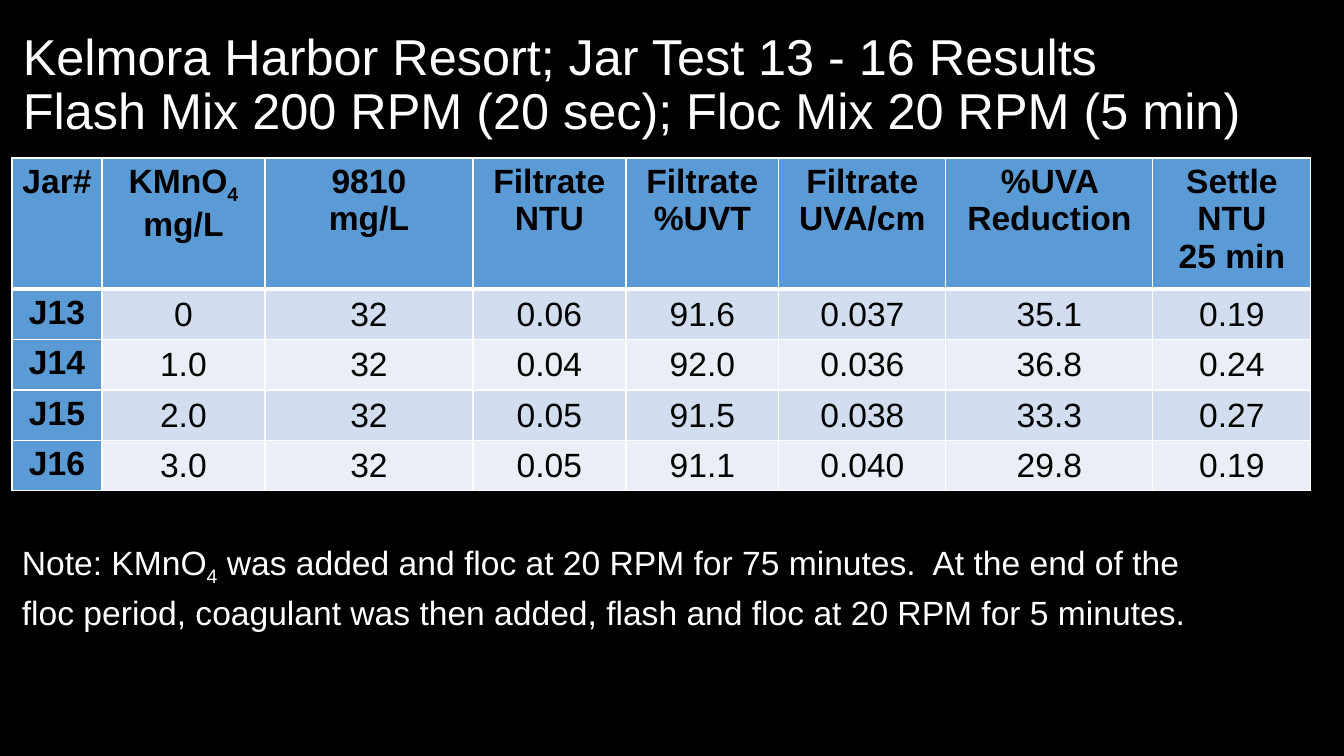
from lxml import etree
from pptx import Presentation
from pptx.dml.color import RGBColor
from pptx.enum.text import MSO_ANCHOR, PP_ALIGN
from pptx.oxml.ns import qn
from pptx.util import Pt

EMU_PER_PX = 12192000 / 1344
CENTER = PP_ALIGN.CENTER
TOP, MIDDLE = MSO_ANCHOR.TOP, MSO_ANCHOR.MIDDLE
FONT = "Arial"
COLORS = {
    "background": "000000",
    "light_text": "FFFFFF",
    "dark_text": "000000",
    "border": "FFFFFF",
    "header": "5B9BD5",
    "odd_row": "D2DEEF",
    "even_row": "EAEFF7",
}

TITLE = ["Kelmora Harbor Resort; Jar Test 13 - 16 Results\v"
         "Flash Mix 200 RPM (20 sec); Floc Mix 20 RPM (5 min)"]
NOTE = ["Note: KMnO_4_ was added and floc at 20 RPM for 75 minutes.  At the end of the",
        "floc period, coagulant was then added, flash and floc at 20 RPM for 5 minutes."]
COLUMN_WIDTHS = [90, 163, 208, 153, 153, 167, 207, 158]
HEADER_HEIGHT, ROW_HEIGHT = 123, 47
HEADERS = [
    ["Jar#"], ["KMnO_4_", "mg/L"], ["9810", "mg/L"], ["Filtrate", "NTU"],
    ["Filtrate", "%UVT"], ["Filtrate", "UVA/cm"], ["%UVA Reduction"],
    ["Settle", "NTU", "25 min"],
]
RESULTS = [
    ["J13", "0", "32", "0.06", "91.6", "0.037", "35.1", "0.19"],
    ["J14", "1.0", "32", "0.04", "92.0", "0.036", "36.8", "0.24"],
    ["J15", "2.0", "32", "0.05", "91.5", "0.038", "33.3", "0.27"],
    ["J16", "3.0", "32", "0.05", "91.1", "0.040", "29.8", "0.19"],
]


def px(length):
    return round(length * EMU_PER_PX)


def color(name):
    return RGBColor.from_string(COLORS[name])


def write_lines(text_frame, lines, size, color_name, bold=False, align=None):
    """Write one paragraph per line; text between underscores is subscript."""
    for index, line in enumerate(lines):
        paragraph = text_frame.add_paragraph() if index else text_frame.paragraphs[0]
        paragraph.alignment = align
        font = paragraph.font
        font.name, font.size, font.bold = FONT, Pt(size), bold
        font.color.rgb = color(color_name)
        if "_" not in line:
            paragraph.text = line
            continue
        for position, part in enumerate(filter(None, line.split("_"))):
            run = paragraph.add_run()
            run.text = part
            if position % 2:
                run.font._element.set("baseline", "-25000")


def add_text(slide, box, lines, size, wrap, anchor):
    shape = slide.shapes.add_textbox(*map(px, box))
    text_frame = shape.text_frame
    text_frame.word_wrap = wrap
    text_frame.vertical_anchor = anchor
    write_lines(text_frame, lines, size, "light_text")
    return text_frame


def set_borders(cell, bottom_width, top_width):
    properties = cell._tc.get_or_add_tcPr()
    widths = {"a:lnL": 1, "a:lnR": 1, "a:lnT": top_width, "a:lnB": bottom_width}
    for tag, width in widths.items():
        line = etree.SubElement(properties, qn(tag), w=str(Pt(width)))
        fill = etree.SubElement(line, qn("a:solidFill"))
        etree.SubElement(fill, qn("a:srgbClr"), val=COLORS["border"])


def fill_cell(cell, lines, row, column):
    is_header = row == 0
    is_label = is_header or column == 0
    set_borders(cell, 3 if is_header else 1, 3 if row == 1 else 1)
    cell.fill.solid()
    band = "odd_row" if row % 2 else "even_row"
    cell.fill.fore_color.rgb = color("header" if is_label else band)
    if not is_label:
        cell.vertical_anchor = MIDDLE
        cell.margin_left = cell.margin_right = cell.margin_top = px(1)
        cell.margin_bottom = 0
    write_lines(cell.text_frame, lines, 24, "dark_text", is_label, CENTER)


def add_results_table(slide, left, top):
    height = HEADER_HEIGHT + ROW_HEIGHT * len(RESULTS)
    rows = [HEADERS] + [[[value] for value in result] for result in RESULTS]
    table = slide.shapes.add_table(
        len(rows), len(COLUMN_WIDTHS),
        px(left), px(top), px(sum(COLUMN_WIDTHS)), px(height)).table
    for column, width in zip(table.columns, COLUMN_WIDTHS):
        column.width = px(width)
    for row_index, row in enumerate(rows):
        table.rows[row_index].height = px(ROW_HEIGHT if row_index else HEADER_HEIGHT)
        for column_index, lines in enumerate(row):
            fill_cell(table.cell(row_index, column_index), lines, row_index, column_index)


def main():
    presentation = Presentation()
    presentation.slide_width, presentation.slide_height = px(1344), px(756)
    slide = presentation.slides.add_slide(presentation.slide_layouts[6])
    slide.background.fill.solid()
    slide.background.fill.fore_color.rgb = color("background")

    title = add_text(slide, (13, 13, 1313, 146), TITLE, 36, True, MIDDLE)
    title.paragraphs[0].line_spacing = 0.9
    add_results_table(slide, 12, 158)
    note = add_text(slide, (12, 537, 1190, 92), NOTE, 24, False, TOP)
    for paragraph in note.paragraphs:
        paragraph.space_before = Pt(3)

    presentation.save("out.pptx")


if __name__ == "__main__":
    main()
